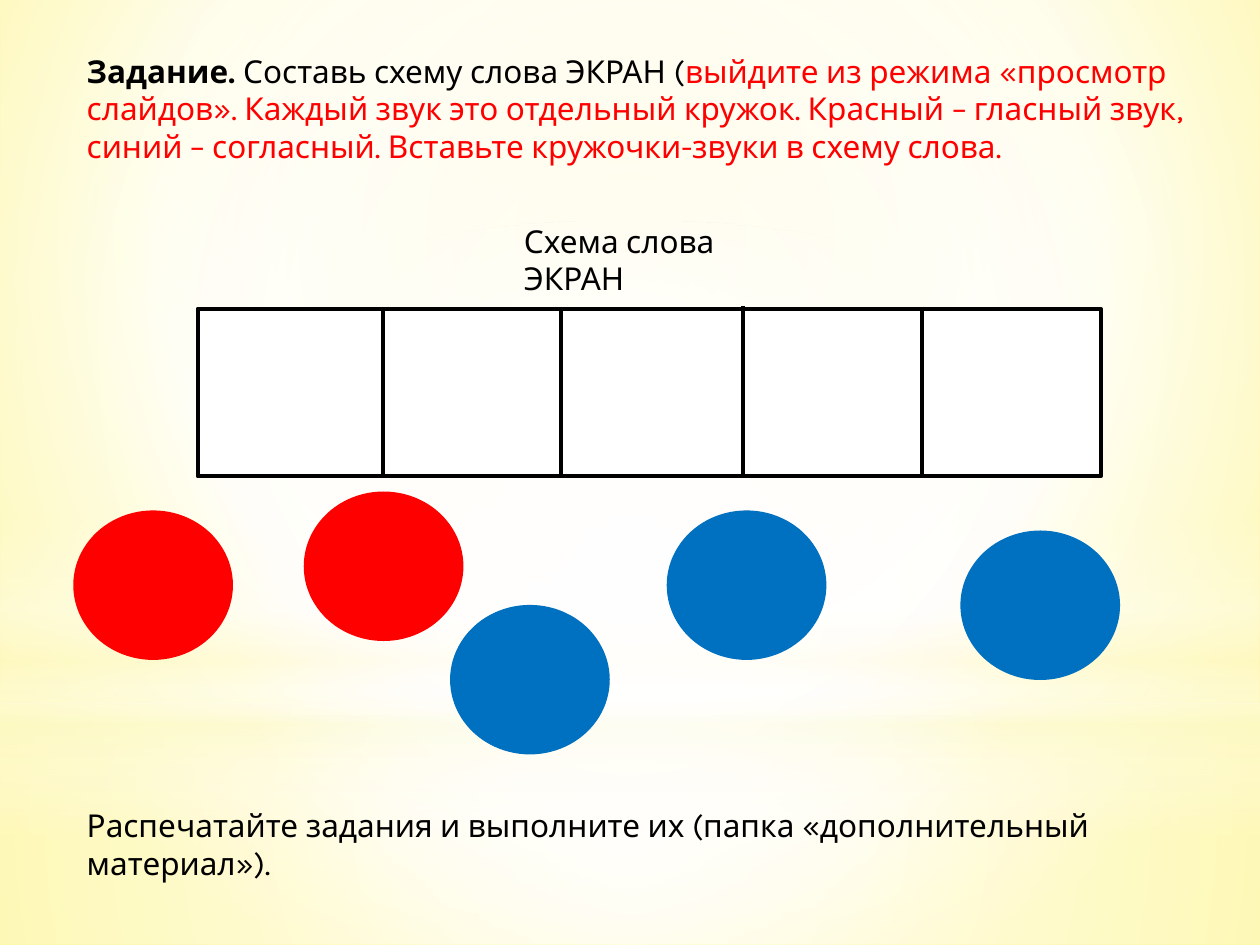
import pptx
import pptx.dml.color
import pptx.enum.shapes
import pptx.enum.text
import pptx.oxml
import pptx.oxml.ns
import pptx.util

Pt = pptx.util.Pt
RGB = pptx.dml.color.RGBColor
SHAPE = pptx.enum.shapes.MSO_SHAPE

BLACK = RGB(0x00, 0x00, 0x00)
WHITE = RGB(0xFF, 0xFF, 0xFF)
RED = RGB(0xFF, 0x00, 0x00)
BLUE = RGB(0x00, 0x70, 0xC0)
CREAM = RGB(0xFE, 0xFA, 0xC9)
PALE = RGB(0xFF, 0xF9, 0xB5)
YELLOW = RGB(0xFF, 0xF4, 0x6F)

FONT = "Karla"
CENTRE = (50, 50, 50, 50)

# Glow layers: preset, top, height, focus (None for a vertical fade),
# stops of place, colour and opacity in percent
GLOWS = [
    (SHAPE.RECTANGLE, 401.8, 138.2, CENTRE,
     [(0, WHITE, 91), (37, WHITE, 76), (100, CREAM, 79)]),
    (SHAPE.RECTANGLE, 0, 401.8, CENTRE,
     [(0, WHITE, 89), (48, WHITE, 62), (100, CREAM, 79)]),
    (SHAPE.RECTANGLE, 296.6, 180, None,
     [(0, WHITE, 0), (29, WHITE, 30), (45, CREAM, 40),
      (55, WHITE, 26), (65, CREAM, 60), (100, WHITE, 0)]),
    (SHAPE.OVAL, 126, 401.8, CENTRE,
     [(0, WHITE, 100), (56, WHITE, 0)]),
]

# Left and top of each sound circle
SOUNDS = [
    (42.5, 292.3, RED),
    (174.2, 281.5, RED),
    (257.8, 346.3, BLUE),
    (381.6, 292.3, BLUE),
    (549.4, 303.8, BLUE),
]

# Left and top of each line between the cells of the word
WALLS = [(218.9, 176.4), (320.4, 176.4), (424.8, 175), (527, 176.4)]


def blend(holder, stops, focus):
    """Swap the solid fill inside holder for a gradient."""
    marks = "".join(
        f'<a:gs pos="{place * 1000}"><a:srgbClr val="{color}">'
        f'<a:alpha val="{alpha * 1000}"/></a:srgbClr></a:gs>'
        for place, color, alpha in stops)
    if focus:
        left, top, right, low = (edge * 1000 for edge in focus)
        course = (f'<a:path path="circle"><a:fillToRect l="{left}" t="{top}" '
                  f'r="{right}" b="{low}"/></a:path>')
    else:
        course = '<a:lin ang="5400000" scaled="0"/>'
    fill = pptx.oxml.parse_xml(
        f'<a:gradFill {pptx.oxml.ns.nsdecls("a")} rotWithShape="1">'
        f'<a:gsLst>{marks}</a:gsLst>{course}</a:gradFill>')
    solid = holder.find(pptx.oxml.ns.qn("a:solidFill"))
    holder.replace(solid, fill)


def paint(slide):
    slide.background.fill.solid()
    holder = slide.element.xpath(".//p:bgPr")[0]
    blend(holder, [(0, PALE, 100), (60, WHITE, 100), (100, YELLOW, 100)],
          (20, 10, 20, 60))


def add_form(slide, kind, left, top, width, height, fill, line=None, weight=0):
    form = slide.shapes.add_shape(
        kind, Pt(left), Pt(top), Pt(width), Pt(height))
    form.shadow.inherit = False
    form.fill.solid()
    form.fill.fore_color.rgb = fill
    if line is None:
        form.line.fill.background()
    else:
        form.line.color.rgb = line
        form.line.width = Pt(weight)
    return form


def add_glow(slide, kind, top, height, focus, stops):
    glow = add_form(slide, kind, 0, top, 720, height, WHITE)
    blend(glow.element.spPr, stops, focus)


def add_wall(slide, left, top):
    wall = slide.shapes.add_connector(
        pptx.enum.shapes.MSO_CONNECTOR.STRAIGHT,
        Pt(left), Pt(top), Pt(left), Pt(top + 96.3))
    wall.line.color.rgb = BLACK
    wall.line.width = Pt(2.25)
    wall.element.spPr.append(pptx.oxml.parse_xml(
        f'<a:effectLst {pptx.oxml.ns.nsdecls("a")}/>'))


def add_note(slide, left, top, width, height, parts):
    """Add a text box; each part is a text, its colour and whether bold."""
    box = slide.shapes.add_textbox(Pt(left), Pt(top), Pt(width), Pt(height))
    frame = box.text_frame
    frame.word_wrap = True
    frame.auto_size = pptx.enum.text.MSO_AUTO_SIZE.SHAPE_TO_FIT_TEXT
    for text, color, bold in parts:
        run = frame.paragraphs[0].add_run()
        run.text = text
        run.font.name = FONT
        run.font.size = Pt(18)
        run.font.bold = bold
        run.font.color.rgb = color


def main():
    deck = pptx.Presentation()
    deck.slide_width, deck.slide_height = Pt(720), Pt(540)
    slide = deck.slides.add_slide(deck.slide_layouts[6])
    paint(slide)
    for glow in GLOWS:
        add_glow(slide, *glow)

    add_note(slide, 42.5, 25.9, 657.4, 72.7, [
        ("Задание. ", BLACK, True),
        ("Составь схему слова ЭКРАН (", BLACK, False),
        ("выйдите из режима «просмотр слайдов». Каждый звук это отдельный "
         "кружок. Красный – гласный звук, синий – согласный. Вставьте "
         "кружочки-звуки в схему слова.", RED, False),
    ])

    add_form(slide, SHAPE.RECTANGLE, 113, 176.4, 516.2, 95.8,
             WHITE, BLACK, 2.25)
    for left, top in WALLS:
        add_wall(slide, left, top)

    add_note(slide, 42.5, 457.2, 662.4, 51.1, [
        ("Распечатайте задания и выполните их "
         "(папка «дополнительный материал»).", BLACK, False)])
    add_note(slide, 292.3, 123.1, 179.3, 28.8, [
        ("Схема слова ЭКРАН", BLACK, False)])

    for left, top, color in SOUNDS:
        add_form(slide, SHAPE.OVAL, left, top, 90, 84.2, color, color, 1.25)

    deck.save("out.pptx")


if __name__ == "__main__":
    main()
